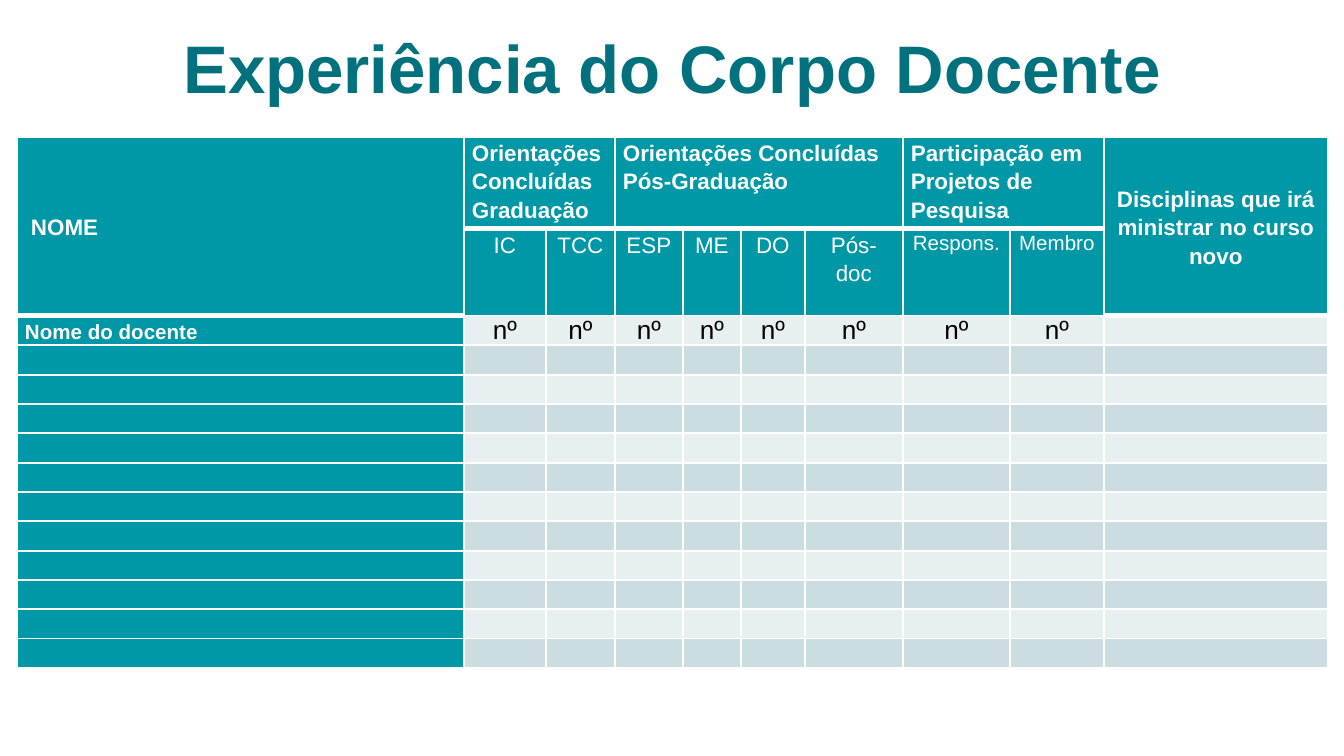
"""Builds the slide listing the teaching staff's experience."""
from dataclasses import dataclass

from pptx import Presentation
from pptx import util as u
from pptx.dml.color import RGBColor
from pptx.enum import text
from pptx.oxml import xmlchemy
from pptx.oxml.ns import qn
from pptx.table import _Cell

EMU_PER_PX = 914400 / 134.4
FONT = "Arial"
TEAL, DARK_TEAL, WHITE, BLACK = "0097A7", "00717D", "FFFFFF", "000000"
BANDS = ("E7EFF1", "CCDDE1")
LEFT, CENTER = text.PP_ALIGN.LEFT, text.PP_ALIGN.CENTER
TOP, MIDDLE = text.MSO_ANCHOR.TOP, text.MSO_ANCHOR.MIDDLE
COLUMNS = (447, 82, 69, 68, 58, 64, 98, 107, 94, 224)
HEADER_ROWS = (92, 86)
STAFF_ROWS = tuple(30 if i % 3 == 1 else 29 for i in range(12))
LAST = len(COLUMNS) - 1


@dataclass(frozen=True)
class Entry:
    row: int
    column: int
    words: str
    rows: int = 1
    columns: int = 1
    size: int = 12
    bold: bool = True
    color: str = WHITE
    align: text.PP_ALIGN = LEFT
    anchor: text.MSO_ANCHOR = TOP
    spacing: float = 1.15
    inset: int = 8


GROUPS = (
    Entry(0, 0, "NOME", rows=2, anchor=MIDDLE, inset=14),
    Entry(0, 1, "Orientações Concluídas Graduação", columns=2),
    Entry(0, 3, "Orientações Concluídas\nPós-Graduação", columns=4),
    Entry(0, 7, "Participação em Projetos de Pesquisa", columns=2),
    Entry(0, LAST, "Disciplinas que irá ministrar no curso novo", rows=2,
          align=CENTER, anchor=MIDDLE),
)
KINDS = ("IC", "TCC", "ESP", "ME", "DO", "Pós-doc", "Respons.", "Membro")


def px(length: int) -> u.Emu:
    """Turn pixels into EMU."""
    return u.Emu(round(length * EMU_PER_PX))


def rgb(value: str) -> RGBColor:
    """Turn a hex string into a colour."""
    return RGBColor.from_string(value)


def style(paragraph, size: int, color: str, bold: bool) -> None:
    """Format every run of a paragraph."""
    for run in paragraph.runs:
        run.font.name, run.font.size, run.font.bold = FONT, u.Pt(size), bold
        run.font.color.rgb = rgb(color)


def border(cell: _Cell, side: str, points: int, position: int) -> None:
    """Draw one white edge of a cell."""
    line = xmlchemy.OxmlElement(f"a:ln{side}")
    line.set("w", str(u.Pt(points)))
    fill = xmlchemy.OxmlElement("a:solidFill")
    color = xmlchemy.OxmlElement("a:srgbClr")
    color.set("val", WHITE)
    fill.append(color)
    line.append(fill)
    cell._tc.get_or_add_tcPr().insert(position, line)


def paint(cell: _Cell, row: int, column: int) -> None:
    """Fill a cell, set its edges and keep its empty line small."""
    outer = column in (0, LAST)
    is_teal = row < 2 or column == 0
    cell.fill.solid()
    cell.fill.fore_color.rgb = rgb(TEAL if is_teal else BANDS[row % 2])
    cell.margin_left = cell.margin_right = px(8)
    cell.margin_top = cell.margin_bottom = 0
    thick_top = row == (2 if outer else 1)
    thick_bottom = row == 0 or (row == 1 and outer)
    edges = (("L", 1), ("R", 1), ("T", 3 if thick_top else 1), ("B", 3 if thick_bottom else 1))
    for position, (side, points) in enumerate(edges):
        border(cell, side, points, position)
    ending = xmlchemy.OxmlElement("a:endParaRPr")
    ending.set("sz", "1000")
    paragraph = cell.text_frame.paragraphs[0]._p
    if paragraph.find(qn("a:endParaRPr")) is None:
        paragraph.append(ending)


def write(table, entry: Entry) -> None:
    """Place an entry in the table, merging the cells it spans."""
    cell = table.cell(entry.row, entry.column)
    if entry.rows * entry.columns > 1:
        cell.merge(table.cell(entry.row + entry.rows - 1, entry.column + entry.columns - 1))
    cell.text_frame.text = entry.words
    cell.vertical_anchor = entry.anchor
    cell.margin_left = px(entry.inset)
    for paragraph in cell.text_frame.paragraphs:
        paragraph.alignment, paragraph.line_spacing = entry.align, entry.spacing
        style(paragraph, entry.size, entry.color, entry.bold)


def add_title(slide) -> None:
    """Fill the title placeholder and drop the subtitle."""
    title, subtitle = slide.placeholders
    subtitle._element.getparent().remove(subtitle._element)
    title.left, title.top, title.width, title.height = map(px, (39, 42, 1267, 78))
    frame = title.text_frame
    frame.text = "Experiência do Corpo Docente"
    frame.word_wrap, frame.auto_size = True, text.MSO_AUTO_SIZE.NONE
    frame.vertical_anchor = text.MSO_ANCHOR.BOTTOM
    frame.margin_left = frame.margin_right = frame.margin_top = frame.margin_bottom = px(13)
    frame.paragraphs[0].alignment = CENTER
    style(frame.paragraphs[0], 36, DARK_TEAL, True)


def add_staff_table(slide) -> None:
    """Draw the table of supervision and projects per teacher."""
    heights = HEADER_ROWS + STAFF_ROWS
    table = slide.shapes.add_table(len(heights), len(COLUMNS), px(17), px(137),
                                   px(sum(COLUMNS)), px(sum(heights))).table
    table.horz_banding = False
    for column, width in zip(table.columns, COLUMNS):
        column.width = px(width)
    for row, height in enumerate(heights):
        table.rows[row].height = px(height)
        for column in range(len(COLUMNS)):
            paint(table.cell(row, column), row, column)
    for group in GROUPS:
        write(table, group)
    for column, kind in enumerate(KINDS, start=1):
        size = 11 if column >= 7 else 12
        write(table, Entry(1, column, kind, size=size, bold=False, align=CENTER))
        write(table, Entry(2, column, "nº", size=14, bold=False, color=BLACK,
                           align=CENTER, anchor=MIDDLE, spacing=1.0))
    write(table, Entry(2, 0, "Nome do docente", size=11, anchor=MIDDLE))


def main() -> None:
    """Build and save the presentation."""
    deck = Presentation()
    deck.slide_width, deck.slide_height = px(1344), px(756)
    slide = deck.slides.add_slide(deck.slide_layouts[0])
    add_title(slide)
    add_staff_table(slide)
    deck.save("out.pptx")


if __name__ == "__main__":
    main()
